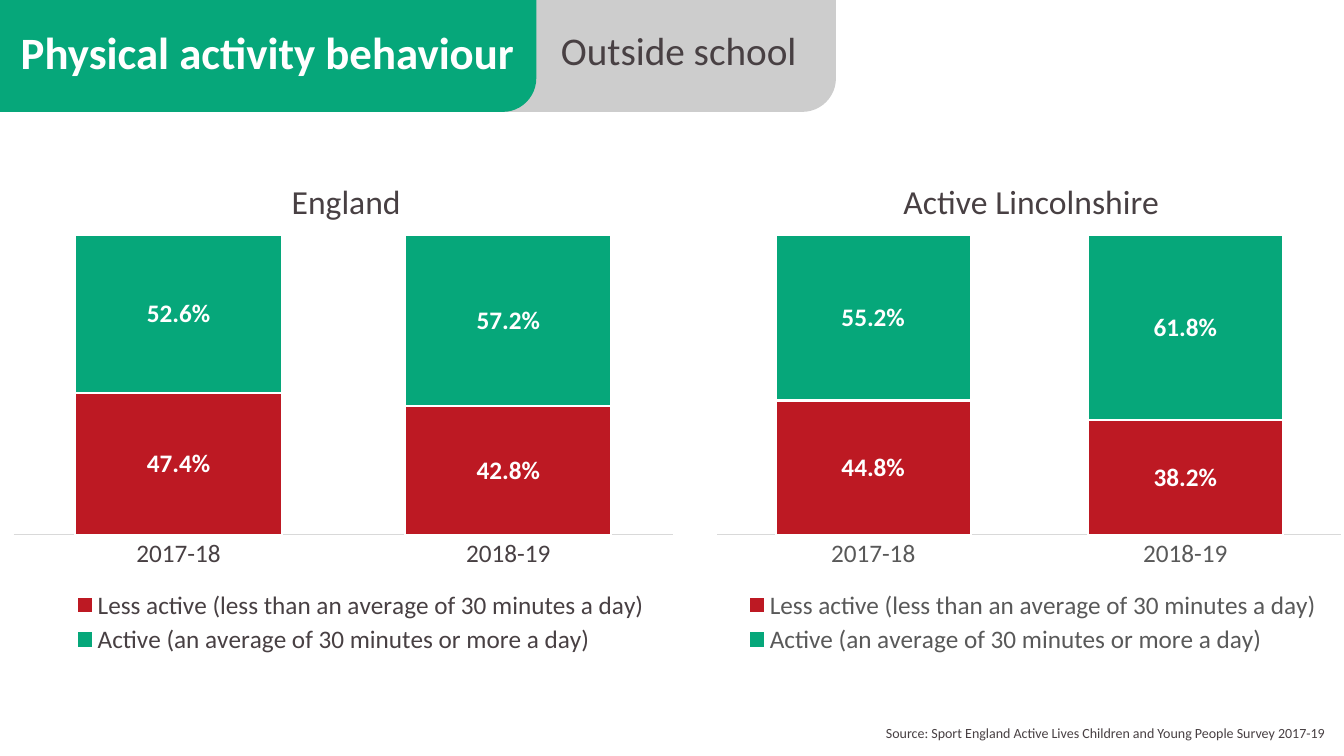
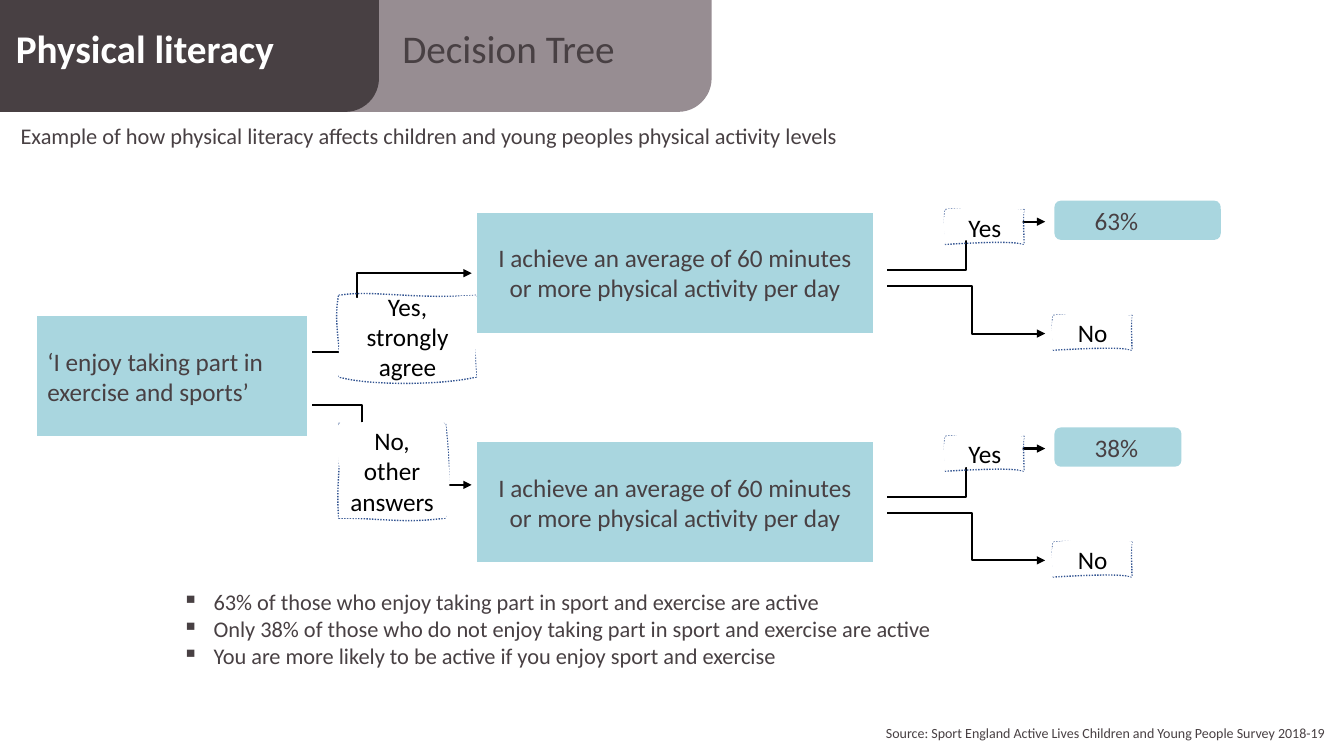
from dataclasses import dataclass

from lxml import etree
from pptx import Presentation
from pptx.chart.data import CategoryChartData
from pptx.dml.color import RGBColor
from pptx.enum.chart import XL_CHART_TYPE, XL_LEGEND_POSITION, XL_TICK_MARK
from pptx.enum.dml import MSO_LINE
from pptx.enum.shapes import MSO_CONNECTOR, MSO_SHAPE
from pptx.enum.text import MSO_ANCHOR, PP_ALIGN
from pptx.oxml import parse_xml
from pptx.oxml.ns import nsdecls, qn
from pptx.util import Inches, Pt

STACKED = XL_CHART_TYPE.COLUMN_STACKED
LEGEND_BOTTOM = XL_LEGEND_POSITION.BOTTOM
NO_TICK = XL_TICK_MARK.NONE
DOTTED = MSO_LINE.ROUND_DOT
ELBOW = MSO_CONNECTOR.ELBOW
BAND = MSO_SHAPE.ROUND_1_RECTANGLE
PROCESS = MSO_SHAPE.FLOWCHART_PROCESS
PILL = MSO_SHAPE.ROUNDED_RECTANGLE
RECTANGLE = MSO_SHAPE.RECTANGLE
TOP, MIDDLE = MSO_ANCHOR.TOP, MSO_ANCHOR.MIDDLE
LEFT, CENTER, RIGHT = PP_ALIGN.LEFT, PP_ALIGN.CENTER, PP_ALIGN.RIGHT


@dataclass(frozen=True)
class Theme:
    font: str = "Calibri"
    ink: str = "484043"
    grey_ink: str = "595959"
    black: str = "000000"
    white: str = "FFFFFF"
    green: str = "06A77A"
    red: str = "BD1923"
    silver: str = "CDCDCD"
    mauve: str = "978D92"
    aqua: str = "A9D6DF"
    axis: str = "D9D9D9"
    dots: str = "325491"
    banner: int = 32
    title: int = 28
    chart_title: int = 24
    label: int = 18
    body: int = 16
    source: int = 10


THEME = Theme()


@dataclass(frozen=True)
class Box:
    """A region in inches; areas within it are given in percent of it."""
    x: float
    y: float
    w: float
    h: float

    def area(self, x, y, w, h):
        left, top = self.point(x, y)
        return Box(left, top, self.w * w / 100, self.h * h / 100)

    def point(self, x, y):
        return self.x + self.w * x / 100, self.y + self.h * y / 100

    def emu(self):
        return [Inches(v) for v in (self.x, self.y, self.w, self.h)]


PAGE = Box(0, 0, 13.33, 7.5)
HEADER = PAGE.area(0, 0, 100, 14.8)

# Hand-drawn frames: four curves for the dotted outline, four for the white
# inside, each with two control points in percent of the frame.
CORNERS = ((100, 0), (100, 100), (0, 100), (0, 0))
SMALL_FRAME = (
    (((35, -9), (55, 17)), ((98, 11), (100, 57)),
     ((87, 90), (40, 95)), ((3, 87), (-4, 31))),
    (((23, -9), (78, -3)), ((97, 43), (97, 87)),
     ((89, 84), (10, 82)), ((-2, 64), (-3, 26))))
AGREE_FRAME = (
    (((23, -7), (53, 5)), ((98, 40), (99, 73)),
     ((77, 110), (22, 111)), ((5, 89), (-5, 38))),
    (((37, 10), (55, 4)), ((105, 32), (97, 53)),
     ((56, 90), (34, 94)), ((-1, 67), (4, 15))))
OTHER_FRAME = (
    (((40, 7), (60, 10)), ((104, 36), (104, 55)),
     ((62, 106), (39, 100)), ((-3, 57), (4, 38))),
    (((35, -2), (53, -3)), ((101, 19), (108, 88)),
     ((57, 98), (46, 100)), ((7, 55), (-5, 35))))


def rgb(value):
    return RGBColor.from_string(value)


def style(font, size, color, bold=False):
    font.name, font.size, font.bold = THEME.font, Pt(size), bold
    font.color.rgb = rgb(color)


def write(shape, lines, size, color=THEME.ink, bold=False, align=LEFT,
          anchor=TOP, bullet=None):
    frame = shape.text_frame
    frame.word_wrap = True
    frame.vertical_anchor = anchor
    for i, line in enumerate(lines):
        paragraph = frame.add_paragraph() if i else frame.paragraphs[0]
        paragraph.text = line
        paragraph.alignment = align
        if bullet:
            props = paragraph._p.get_or_add_pPr()
            props.set("marL", str(Inches(0.31)))
            props.set("indent", str(-Inches(0.31)))
            etree.SubElement(props, qn("a:buChar")).set("char", bullet)
        style(paragraph.font, size, color, bold)


def text(slide, box, lines, size, **look):
    write(slide.shapes.add_textbox(*box.emu()), lines, size, **look)


def block(slide, box, kind, fill):
    shape = slide.shapes.add_shape(kind, *box.emu())
    shape.shadow.inherit = False
    shape.fill.solid()
    shape.fill.fore_color.rgb = rgb(fill)
    shape.line.fill.background()
    return shape


def band(slide, box, fill):
    """Band whose lower right corner is rounded."""
    shape = block(slide, box, BAND, fill)
    shape.adjustments[0] = 0.3
    shape.rotation = 180
    shape._element.spPr.find(qn("a:xfrm")).set("flipH", "1")


def header(slide, box, front, back):
    """Two overlapping bands, each (start, end, fill, words, words' box, look)."""
    for start, end, fill, *_ in (back, front):
        band(slide, box.area(start, 0, end - start, 100), fill)
    for *_, words, place, look in (front, back):
        text(slide, box.area(*place), [words], **look)


def source(slide, years):
    line = f"Source: Sport England Active Lives Children and Young People Survey {years}"
    text(slide, PAGE.area(44.6, 95.2, 54.7, 3.6), [line], THEME.source, align=RIGHT)


def set_layout(parent, index, inner=False, **shares):
    """Fix the place of a chart element, in shares of the chart."""
    for old in parent.findall(qn("c:layout")):
        parent.remove(old)
    target = '<c:layoutTarget val="inner"/>' if inner else ""
    modes = "".join(f'<c:{k}Mode val="edge"/>' for k in "xy")
    sizes = "".join(f'<c:{k} val="{v}"/>' for k, v in shares.items())
    parent.insert(index, parse_xml(
        f'<c:layout {nsdecls("c")}><c:manualLayout>{target}{modes}{sizes}'
        "</c:manualLayout></c:layout>"))


def activity_chart(slide, box, title, less_active, active, ink, title_x, legend_x):
    data = CategoryChartData(number_format="0.0%")
    data.categories = ["2017-18", "2018-19"]
    data.add_series("Less active (less than an average of 30 minutes a day)", less_active)
    data.add_series("Active (an average of 30 minutes or more a day)", active)
    chart = slide.shapes.add_chart(STACKED, *box.emu(), data).chart
    style(chart.font, THEME.label, ink)

    chart.has_title = True
    heading = chart.chart_title.text_frame.paragraphs[0]
    heading.text = title
    style(heading.font, THEME.chart_title, THEME.ink)
    set_layout(chart.chart_title._element, 1, x=title_x, y=0.05)

    chart.has_legend = True
    chart.legend.position = LEGEND_BOTTOM
    chart.legend.include_in_layout = False
    style(chart.legend.font, THEME.label, ink)
    set_layout(chart.legend._element, 1, x=legend_x, y=0.85, w=0.92, h=0.14)

    values, years = chart.value_axis, chart.category_axis
    values.visible = values.has_major_gridlines = False
    values.minimum_scale, values.maximum_scale = 0, 1
    years.major_tick_mark = NO_TICK
    years.format.line.color.rgb = rgb(THEME.axis)
    years.format.line.width = Pt(0.75)
    style(years.tick_labels.font, THEME.label, ink)

    plot = chart.plots[0]
    plot.gap_width, plot.overlap, plot.vary_by_categories = 60, 100, False
    for series, color in zip(plot.series, (THEME.red, THEME.green)):
        series.format.fill.solid()
        series.format.fill.fore_color.rgb = rgb(color)
        series.format.line.color.rgb = rgb(THEME.white)
        series.format.line.width = Pt(1.5)
        labels = series.data_labels
        labels.show_value = True
        labels.number_format, labels.number_format_is_linked = "0.0%", False
        style(labels.font, THEME.label, THEME.white, bold=True)
    set_layout(chart._chartSpace.chart.plotArea, 0, inner=True,
               x=0.02, y=0.17, w=0.97, h=0.58)


def curve_path(controls, attribute):
    def pt(point):
        return f'<a:pt x="{point[0]}" y="{point[1]}"/>'
    curves = "".join(
        f"<a:cubicBezTo>{pt(a)}{pt(b)}{pt(corner)}</a:cubicBezTo>"
        for (a, b), corner in zip(controls, CORNERS))
    return (f'<a:path w="100" h="100" {attribute}><a:moveTo>{pt((0, 0))}</a:moveTo>'
            f"{curves}<a:close/></a:path>")


def answer(slide, box, words, frame=SMALL_FRAME):
    """Answer in a hand-drawn dotted frame."""
    shape = block(slide, box, RECTANGLE, THEME.white)
    shape.line.color.rgb = rgb(THEME.dots)
    shape.line.width = Pt(1)
    shape.line.dash_style = DOTTED
    outline, inside = frame
    preset = shape._element.spPr.find(qn("a:prstGeom"))
    preset.getparent().replace(preset, parse_xml(
        f'<a:custGeom {nsdecls("a")}><a:avLst/><a:gdLst/><a:ahLst/><a:cxnLst/>'
        '<a:rect l="l" t="t" r="r" b="b"/><a:pathLst>'
        + curve_path(outline, 'fill="none"') + curve_path(inside, 'stroke="0"')
        + "</a:pathLst></a:custGeom>"))
    write(shape, [words], THEME.label, THEME.black, align=CENTER, anchor=MIDDLE)


def arrow(slide, start, end, bend):
    """Elbow arrow that turns at the given share of its width."""
    link = slide.shapes.add_connector(ELBOW, *(Inches(v) for v in (*start, *end)))
    link.line.color.rgb = rgb(THEME.black)
    link.line.width = Pt(1.5)
    props = link._element.spPr
    guide = etree.SubElement(props.find(qn("a:prstGeom")).find(qn("a:avLst")), qn("a:gd"))
    guide.set("name", "adj1")
    guide.set("fmla", f"val {round(bend * 100000)}")
    etree.SubElement(props.find(qn("a:ln")), qn("a:tailEnd")).set("type", "triangle")
    etree.SubElement(props, qn("a:effectLst"))


def statement(slide, box, words, align):
    write(block(slide, box, PROCESS, THEME.aqua), [words], THEME.label,
          align=align, anchor=MIDDLE)


def outcomes(slide, box, share, pill_width):
    """Yes and No branches, with the share of those who say yes."""
    arrow(slide, box.point(0, 46), box.point(47.4, 14), 0.5)
    answer(slide, box.area(17.5, 6, 23.56, 23), "Yes")
    arrow(slide, box.point(0, 56.5), box.point(47.4, 88), 0.54)
    answer(slide, box.area(49.85, 76, 23.56, 23), "No")
    pill = block(slide, box.area(50.15, 0, pill_width, 26), PILL, THEME.aqua)
    pill.text_frame.margin_left = Inches(0.38)
    write(pill, [share], THEME.label, anchor=MIDDLE)


def decision_tree(slide, box):
    statement(slide, box.area(2.78, 36.44, 20.1, 26.44),
              "‘I enjoy taking part in exercise and sports’", LEFT)
    arrow(slide, box.point(23.25, 56), box.point(35.1, 73.56), 0.31)
    arrow(slide, box.point(23.25, 44.22), box.point(35.1, 26.89), 0.28)
    answer(slide, box.area(25.2, 31.78, 10.25, 18), "Yes, strongly agree", AGREE_FRAME)
    answer(slide, box.area(25.2, 60, 7.95, 20.89), "No, other answers", OTHER_FRAME)
    for question_y, outcome_y, share, pill_width in (
            (13.56, 10.89, "63%", 49.85), (64.22, 60.89, "38%", 38.07)):
        statement(slide, box.area(35.48, question_y, 29.48, 26.44),
                  "I achieve an average of 60 minutes or more physical activity per day",
                  CENTER)
        outcomes(slide, box.area(66, outcome_y, 24.83, 33.33), share, pill_width)


def behaviour_slide(slide):
    header(slide, HEADER,
           (0, 39.9, THEME.green, "Physical activity behaviour", (0.8, 18, 39.9, 58),
            dict(size=THEME.banner, color=THEME.white, bold=True)),
           (30, 62.2, THEME.silver, "Outside school", (41, 19, 21.2, 51),
            dict(size=THEME.title)))
    activity_chart(slide, PAGE.area(0, 19.5, 50.6, 68.3), "England",
                   (0.474, 0.428), (0.526, 0.572), THEME.ink, 0.42, 0.07)
    activity_chart(slide, PAGE.area(52.4, 19.5, 47.9, 68.3), "Active Lincolnshire",
                   (0.448, 0.382), (0.552, 0.618), THEME.grey_ink, 0.3, 0.05)
    source(slide, "2017-19")


def literacy_slide(slide):
    header(slide, HEADER,
           (0, 28.2, THEME.ink, "Physical literacy", (0.45, 17, 26.1, 51),
            dict(size=THEME.title, color=THEME.white, bold=True)),
           (19.5, 52.95, THEME.mauve, "Decision Tree", (29.2, 17, 23.3, 51),
            dict(size=THEME.title)))
    text(slide, PAGE.area(0.8, 15.5, 94.6, 4.9),
         ["Example of how physical literacy affects children and young peoples "
          "physical activity levels"], THEME.body)
    decision_tree(slide, PAGE.area(0, 20, 100, 60))
    text(slide, PAGE.area(12.83, 77.2, 86, 12.1),
         ["63% of those who enjoy taking part in sport and exercise are active",
          "Only 38% of those who do not enjoy taking part in sport and exercise are active",
          "You are more likely to be active if you enjoy sport and exercise"],
         THEME.body, bullet="▪")
    source(slide, "2018-19")


def main():
    deck = Presentation()
    deck.slide_width, deck.slide_height = Inches(PAGE.w), Inches(PAGE.h)
    for build in (behaviour_slide, literacy_slide):
        build(deck.slides.add_slide(deck.slide_layouts[6]))
    deck.save("out.pptx")


if __name__ == "__main__":
    main()
